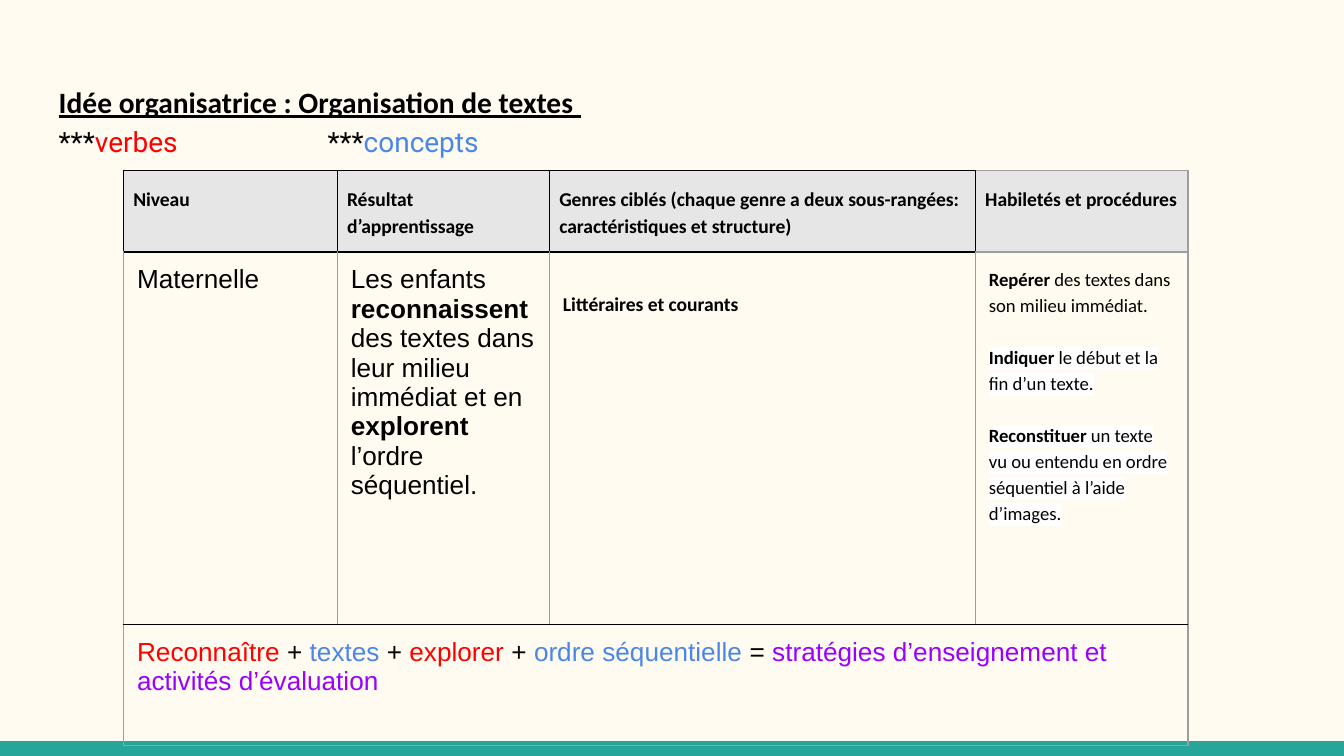
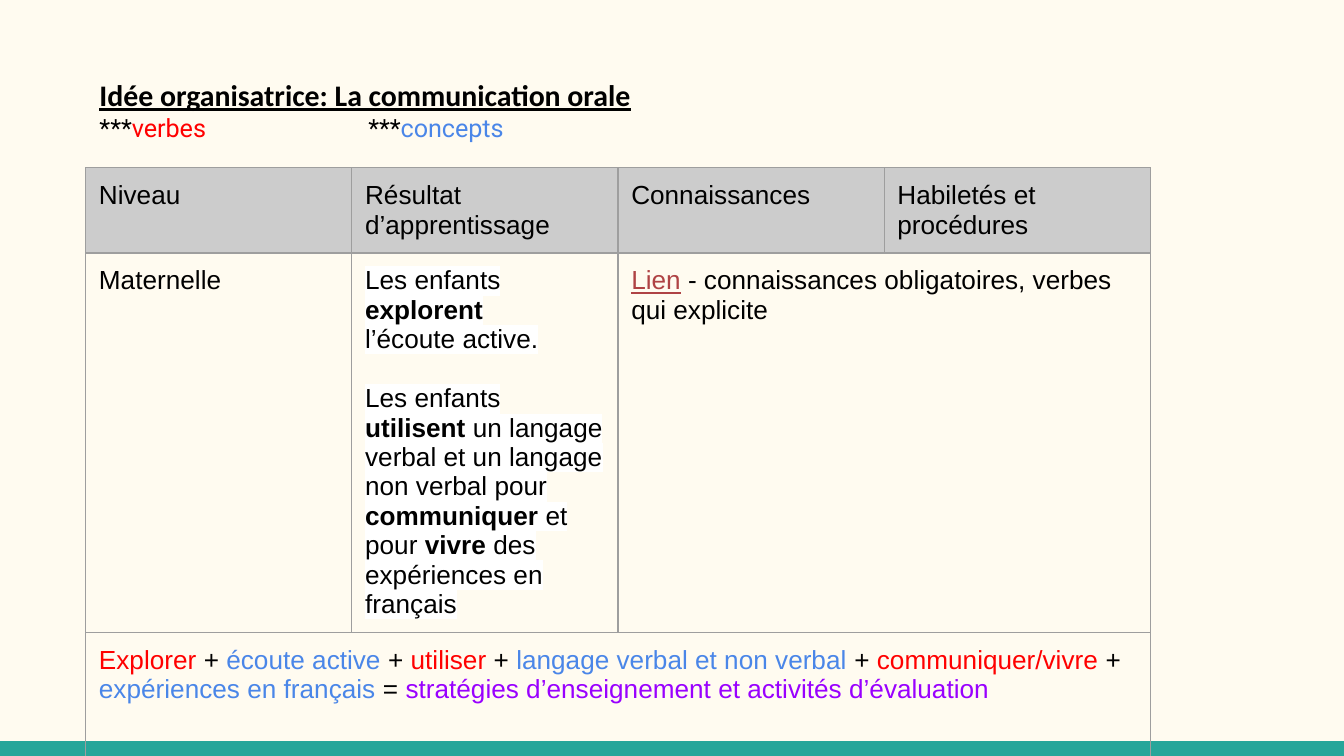
from dataclasses import dataclass
from lxml.etree import SubElement
from pptx import Presentation
from pptx.dml.color import RGBColor
from pptx.enum.shapes import MSO_SHAPE
from pptx.enum.text import MSO_ANCHOR, MSO_AUTO_SIZE, PP_ALIGN
from pptx.oxml.ns import qn
from pptx.util import Cm, Pt

CREAM = RGBColor(0xFF, 0xFB, 0xF0)
TEAL = RGBColor(0x26, 0xA6, 0x9A)
BLACK = RGBColor(0, 0, 0)
WHITE = RGBColor(0xFF, 0xFF, 0xFF)
RED = RGBColor(0xFF, 0, 0)
BLUE = RGBColor(0x4A, 0x86, 0xE8)
PURPLE = RGBColor(0x99, 0, 0xFF)
ROSE = RGBColor(0xAF, 0x43, 0x45)
GREY = RGBColor(0x9E, 0x9E, 0x9E)
PALE = RGBColor(0xE7, 0xE6, 0xE6)
SILVER = RGBColor(0xCC, 0xCC, 0xCC)

TINTS = {"r": RED, "c": BLUE, "p": PURPLE, "l": ROSE}
EDGES = {"k": BLACK, "g": GREY}


@dataclass
class Look:
    font: str
    size: float
    line: float = 1
    gap: float = 0
    side: float = 0.25
    top: float = 0.25


BODY = Look("Arial", 14, gap=16)
HEAD = Look("Calibri", 10.5, 1.15, side=0.18)
GENRE = Look("Calibri", 10.5, 1.15, top=0.71)
SKILL = Look("Calibri", 10, 1.15, gap=14)

# Run marks: b bold, u underline, h highlight, s space before,
# r verb, c concept, p strategy, l link colour.
KEY = [("***", ""), ("verbes", "r"), ("\t\t***", ""), ("concepts", "c")]

SLIDES = [
    {
        "title": "Idée organisatrice : Organisation de textes ",
        "box": (0.86, 1.24, 23.67, 1.7),
        "looks": (Look("Calibri", 15.8, 1.15), Look("Roboto", 15, 1.15)),
        "spot": (2.34, 3.23),
        "cols": (4.04, 4.01, 8.05, 4.01),
        "rows": (1.32, 7.04, 2.29),
        "tone": PALE,
        "edges": (("kkkk", "kkkk", "kkkk", "kggg"),
                  ("ggkk", "ggkk", "ggkk", "gggk"),
                  ("ggkg",) * 4),
        "cells": [
            [(HEAD, [[("Niveau", "b")]]),
             (HEAD, [[("Résultat d’apprentissage", "b")]]),
             (HEAD, [[("Genres ciblés (chaque genre a deux sous-rangées: "
                       "caractéristiques et structure)", "b")]]),
             (HEAD, [[("Habiletés et procédures", "b")]])],
            [(BODY, [[("Maternelle", "")]]),
             (BODY, [[("Les enfants ", ""), ("reconnaissent", "b")],
                     [("des textes dans leur milieu", "")],
                     [("immédiat et en ", ""), ("explorent", "b")],
                     [("l’ordre séquentiel.", "")]]),
             (GENRE, [[("Littéraires et courants", "b")]]),
             (SKILL, [[("Repérer ", "b"),
                       ("des textes dans son milieu immédiat.", "")],
                      [("Indiquer ", "bhs"),
                       ("le début et la fin d’un texte.", "h")],
                      [("Reconstituer ", "bhs"),
                       ("un texte vu ou entendu en ordre séquentiel "
                        "à l’aide d’images.", "h")]])],
            [(BODY, [[("Reconnaître ", "r"), ("+ ", ""), ("textes", "c"),
                      (" + ", ""), ("explorer ", "r"), ("+ ", ""),
                      ("ordre séquentielle ", "c"), ("= ", ""),
                      ("stratégies d’enseignement et "
                       "activités d’évaluation", "p")]]),
             None, None, None],
        ],
    },
    {
        "title": "Idée organisatrice: La communication orale",
        "box": (1.63, 1.19, 23.04, 1.7),
        "looks": (Look("Calibri", 16), Look("Roboto", 13.5)),
        "spot": (1.62, 3.17),
        "cols": (5.03,) * 4,
        "rows": (1.42, 5.31, 2.79),
        "tone": SILVER,
        "edges": (("gggg",) * 4,) * 3,
        "cells": [
            [(BODY, [[("Niveau", "")]]),
             (BODY, [[("Résultat d’apprentissage", "")]]),
             (BODY, [[("Connaissances", "")]]),
             (BODY, [[("Habiletés et procédures", "")]])],
            [(BODY, [[("Maternelle", "")]]),
             (BODY, [[("Les enfants ", "h"), ("explorent", "bh")],
                     [("l’écoute active.", "h")],
                     [("Les enfants ", "hs"), ("utilisent", "bh"),
                      (" un langage verbal et un langage non verbal pour ",
                       "h"),
                      ("communiquer", "bh"), (" et pour ", "h"),
                      ("vivre", "bh"), (" des expériences en", "h")],
                     [("français", "h")]]),
             (BODY, [[("Lien", "lu"),
                      (" - connaissances obligatoires, verbes qui explicite",
                       "")]]),
             None],
            [(BODY, [[("Explorer", "r"), (" + ", ""),
                      ("écoute active ", "c"), ("+ ", ""),
                      ("utiliser ", "r"), ("+ ", ""),
                      ("langage verbal et non verbal ", "c"), ("+ ", ""),
                      ("communiquer/vivre", "r"), (" + ", ""),
                      ("expériences en français", "c"), (" = ", ""),
                      ("stratégies d’enseignement et "
                       "activités d’évaluation", "p")]]),
             None, None, None],
        ],
    },
]


def style(run, look, marks):
    font = run.font
    font.name, font.size = look.font, Pt(look.size)
    font.bold, font.underline = "b" in marks, "u" in marks
    font.color.rgb = next((TINTS[m] for m in marks if m in TINTS), BLACK)
    if "h" in marks:
        props = run._r.get_or_add_rPr()
        glow = SubElement(props, qn("a:highlight"))
        SubElement(glow, qn("a:srgbClr"), val=str(WHITE))
        props.find(qn("a:solidFill")).addnext(glow)


def write(para, look, runs):
    para.alignment = PP_ALIGN.LEFT
    para.line_spacing = look.line
    para.space_before = Pt(look.gap if "s" in runs[0][1] else 0)
    for text, marks in runs:
        run = para.add_run()
        run.text = text
        style(run, look, marks)


def fill(frame, pairs):
    for n, (look, runs) in enumerate(pairs):
        para = frame.add_paragraph() if n else frame.paragraphs[0]
        write(para, look, runs)


def border(cell, edges):
    props = cell._tc.get_or_add_tcPr()
    for side, edge in zip("LRTB", edges):
        line = SubElement(props, qn(f"a:ln{side}"), w=str(Pt(0.75)))
        paint = SubElement(line, qn("a:solidFill"))
        SubElement(paint, qn("a:srgbClr"), val=str(EDGES[edge]))


def add_title(slide, data):
    title = slide.shapes.title
    title.left, title.top, title.width, title.height = map(Cm, data["box"])
    frame = title.text_frame
    frame.word_wrap = True
    frame.auto_size = MSO_AUTO_SIZE.NONE
    frame.vertical_anchor = MSO_ANCHOR.TOP
    frame.margin_left = frame.margin_right = Cm(0.25)
    frame.margin_top = frame.margin_bottom = Cm(0.25)
    fill(frame, zip(data["looks"], ([(data["title"], "bu")], KEY)))
    tabs = SubElement(frame.paragraphs[1]._p.get_or_add_pPr(), qn("a:tabLst"))
    for stop in (2.54, 5.08):
        SubElement(tabs, qn("a:tab"), pos=str(Cm(stop)), algn="l")


def add_grid(slide, data):
    cols, rows, cells = data["cols"], data["rows"], data["cells"]
    area = map(Cm, (*data["spot"], sum(cols), sum(rows)))
    table = slide.shapes.add_table(len(rows), len(cols), *area).table
    table.first_row = table.horz_banding = False
    for col, width in zip(table.columns, cols):
        col.width = Cm(width)
    for r, height in enumerate(rows):
        table.rows[r].height = Cm(height)
        for c, item in enumerate(cells[r]):
            cell = table.cell(r, c)
            border(cell, data["edges"][r][c])
            if r:
                cell.fill.background()
            else:
                cell.fill.solid()
                cell.fill.fore_color.rgb = data["tone"]
            if not item:
                continue
            look, paras = item
            cell.margin_left = cell.margin_right = Cm(look.side)
            cell.margin_top, cell.margin_bottom = Cm(look.top), Cm(0.25)
            fill(cell.text_frame, [(look, runs) for runs in paras])
            end = c + 1
            while end < len(cols) and not cells[r][end]:
                end += 1
            if end > c + 1:
                cell.merge(table.cell(r, end - 1))


def add_band(deck, slide):
    master = deck.slide_master
    master.background.fill.solid()
    master.background.fill.fore_color.rgb = CREAM
    height = Cm(0.28)
    band = slide.shapes.add_shape(
        MSO_SHAPE.RECTANGLE, 0, deck.slide_height - height,
        deck.slide_width, height)
    band.shadow.inherit = False
    band.fill.solid()
    band.fill.fore_color.rgb = TEAL
    band.line.fill.background()
    band.element.nvSpPr.cNvPr.set("id", "20")
    master.shapes.element.append(band.element)


def main():
    deck = Presentation()
    deck.slide_width, deck.slide_height = Cm(25.4), Cm(14.29)
    for n, data in enumerate(SLIDES):
        slide = deck.slides.add_slide(deck.slide_layouts[5])
        if not n:
            add_band(deck, slide)
        add_title(slide, data)
        add_grid(slide, data)
    deck.save("out.pptx")


if __name__ == "__main__":
    main()
